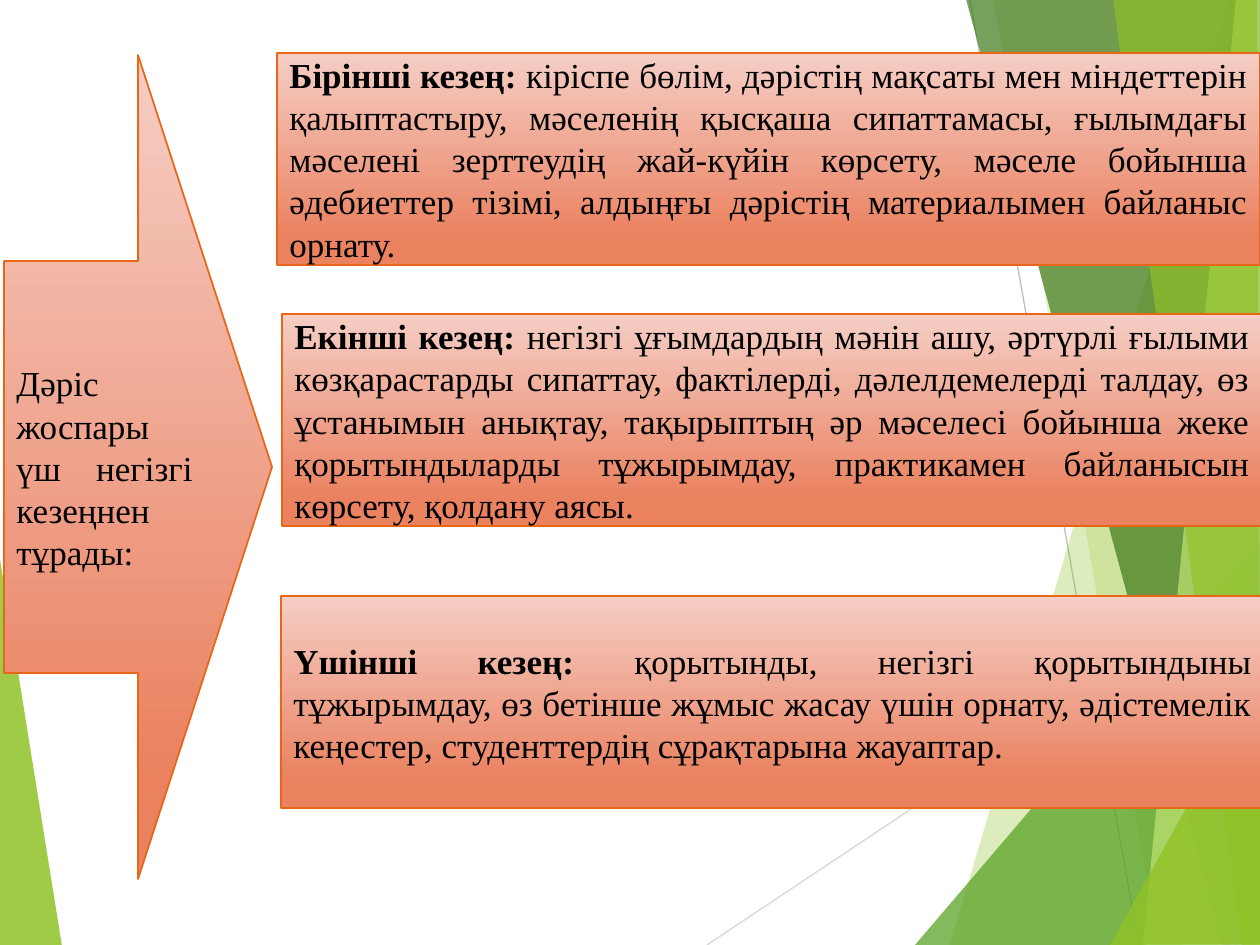
"""Build the slide on the three stages of a lecture plan."""
from lxml.etree import SubElement
from pptx import Presentation
from pptx.dml.color import RGBColor
from pptx.enum.shapes import MSO_CONNECTOR as Connector, MSO_SHAPE as Shape
from pptx.enum.text import MSO_ANCHOR as Anchor, PP_ALIGN as Align
from pptx.oxml.ns import qn
from pptx.util import Emu, Pt

SCALE = 914400 / 126
WIDTH, HEIGHT = 1260, 945
FONT = "Times New Roman"
COLORS = {
    "lime": "90C226", "green": "54A021", "forest": "3F7819", "pale": "C0E474",
    "silver": "D9D9D9", "gray": "BFBFBF", "blush": "F5CEC5", "coral": "EA815F",
    "orange": "E76618", "black": "000000",
}
RAYS = [
    ("silver", (707, 945), (1261, 576)),
    ("gray", (970, 0), (1139, 945)),
]
FACETS = [
    ("lime", 85, [(-1, 553), (62, 946), (-1, 945)]),
    ("lime", 30, [(1229, 0), (950, 945), (1263, 946), (1261, 1)]),
    ("lime", 20, [(993, -1), (1158, 945), (1261, 945), (1261, -1)]),
    ("green", 72, [(915, 945), (1260, 541), (1261, 945)]),
    ("forest", 70, [(966, -1), (1222, 945), (1261, 944), (1261, -1)]),
    ("pale", 70, [(1236, -1), (1143, 945), (1261, 945), (1260, -1)]),
    ("lime", 65, [(1113, -1), (1242, 945), (1260, 945), (1257, -1)]),
    ("lime", 80, [(1110, 945), (1261, 674), (1261, 944)]),
]
PANELS = [
    (Shape.RIGHT_ARROW, (4, 55, 268, 824), "",
     "Дәріс жоспары үш негізгі кезеңнен тұрады:"),
    (Shape.RECTANGLE, (277, 53, 983, 212), "Бірінші кезең:",
     " кіріспе бөлім, дәрістің мақсаты мен міндеттерін қалыптастыру, "
     "мәселенің қысқаша сипаттамасы, ғылымдағы мәселені зерттеудің "
     "жай-күйін көрсету, мәселе бойынша әдебиеттер тізімі, алдыңғы "
     "дәрістің материалымен байланыс орнату."),
    (Shape.RECTANGLE, (282, 314, 980, 212), "Екінші кезең:",
     " негізгі ұғымдардың мәнін ашу, әртүрлі ғылыми көзқарастарды сипаттау, "
     "фактілерді, дәлелдемелерді талдау, өз ұстанымын анықтау, тақырыптың "
     "әр мәселесі бойынша жеке қорытындыларды тұжырымдау, практикамен "
     "байланысын көрсету, қолдану аясы."),
    (Shape.RECTANGLE, (281, 596, 983, 212), "Үшінші кезең:",
     " қорытынды, негізгі қорытындыны тұжырымдау, өз бетінше жұмыс жасау "
     "үшін орнату, әдістемелік кеңестер, студенттердің сұрақтарына жауаптар."),
]


def px(length):
    return Emu(round(length * SCALE))


def color(name):
    return RGBColor.from_string(COLORS[name])


def add_ray(shapes, tint, start, end):
    ray = shapes.add_connector(Connector.STRAIGHT, *map(px, start + end))
    ray.line.color.rgb = color(tint)
    ray.line.width = Pt(0.75)
    SubElement(ray._element.spPr, qn("a:effectLst"))


def add_facet(shapes, tint, opacity, corners):
    outline = shapes.build_freeform(*corners[0], scale=SCALE)
    outline.add_line_segments(corners[1:], close=True)
    facet = outline.convert_to_shape()
    facet.shadow.inherit = False
    facet.fill.solid()
    facet.fill.fore_color.rgb = color(tint)
    shade = next(facet._element.spPr.iter(qn("a:srgbClr")))
    SubElement(shade, qn("a:alpha"), val=str(opacity * 1000))
    facet.line.fill.background()


def add_panel(shapes, preset, box, heading, body):
    panel = shapes.add_shape(preset, *map(px, box))
    panel.shadow.inherit = False
    panel.fill.gradient()
    panel.fill.gradient_angle = 270
    stops = zip(panel.fill.gradient_stops, (0, 0.88), ("blush", "coral"))
    for stop, position, tint in stops:
        stop.position = position
        stop.color.rgb = color(tint)
    panel.line.color.rgb = color("orange")
    panel.line.width = Pt(1)

    frame = panel.text_frame
    frame.word_wrap = True
    frame.vertical_anchor = Anchor.MIDDLE
    paragraph = frame.paragraphs[0]
    paragraph.alignment = Align.JUSTIFY
    for wording, bold in ((heading, True), (body, False)):
        if wording:
            run = paragraph.add_run()
            run.text = wording
            run.font.name = FONT
            run.font.size = Pt(20)
            run.font.bold = bold
            run.font.color.rgb = color("black")


def main():
    deck = Presentation()
    deck.slide_width, deck.slide_height = px(WIDTH), px(HEIGHT)
    shapes = deck.slides.add_slide(deck.slide_layouts[6]).shapes
    for add_part, parts in (
        (add_ray, RAYS), (add_facet, FACETS), (add_panel, PANELS),
    ):
        for part in parts:
            add_part(shapes, *part)
    deck.save("out.pptx")


if __name__ == "__main__":
    main()
